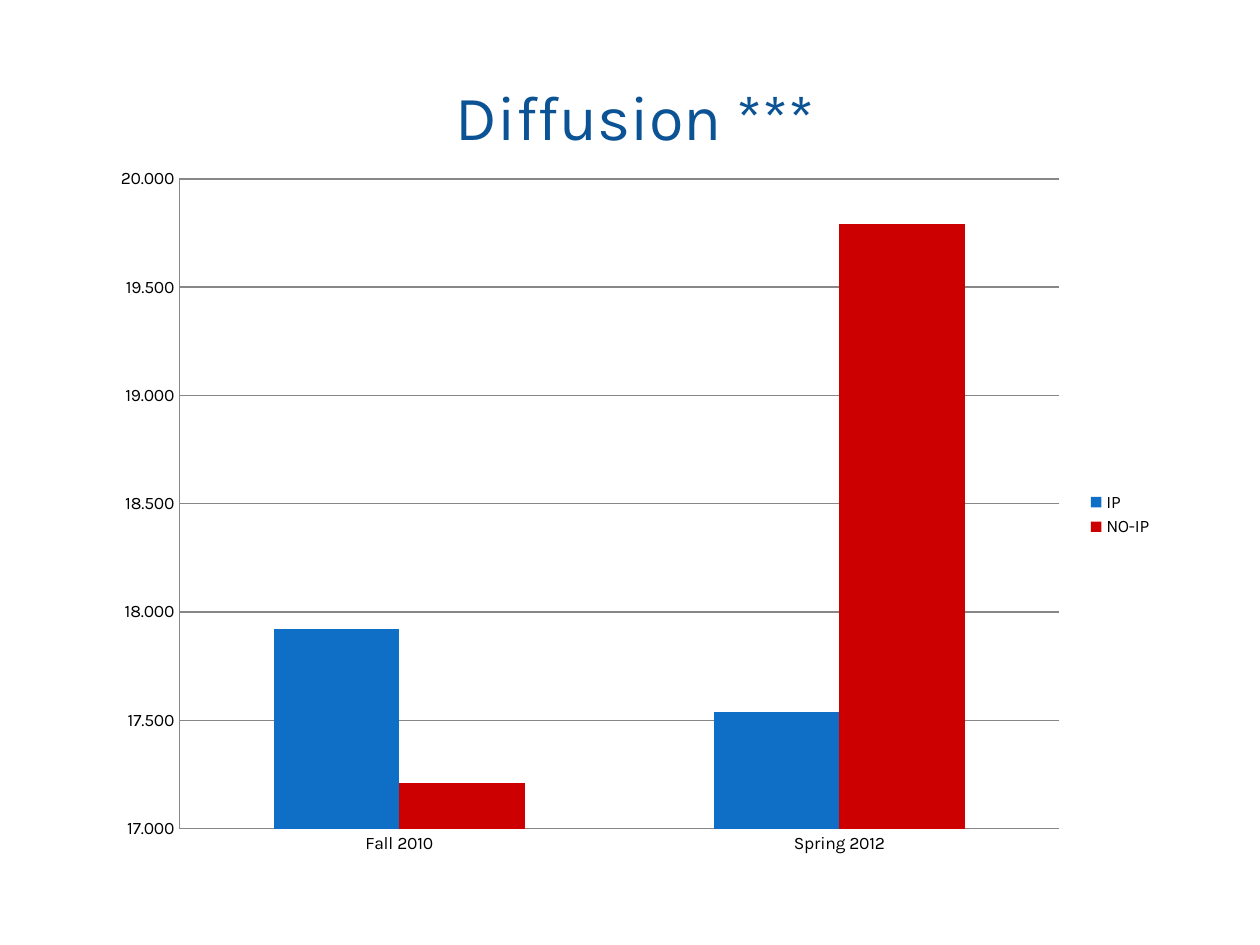
from lxml import etree
from pptx import Presentation
from pptx.chart.data import CategoryChartData
from pptx.dml.color import RGBColor
from pptx.enum import chart as ch, text
from pptx.oxml import parse_xml
from pptx.oxml.ns import nsdecls
from pptx.util import Pt

COLORS = {"title": "0B5394", "text": "000000", "line": "878787",
          "IP": "0F6FC6", "NO-IP": "CC0000"}
FONT = "Karla"
LEFT, WIDTH = Pt(60), Pt(606)
CATEGORIES = ["Fall 2010", "Spring 2012"]
SERIES = {"IP": [17.92, 17.54], "NO-IP": [17.21, 19.79]}
PLOT_AREA = {"x": 0.07, "y": 0.03, "w": 0.83, "h": 0.91}


def rgb(name):
    return RGBColor.from_string(COLORS[name])


def style_font(font, size, color):
    font.name = FONT
    font.size = Pt(size)
    font.color.rgb = rgb(color)


def style_line(line):
    line.color.rgb = rgb("line")
    line.width = Pt(0.75)


def add_title(s, title):
    sp = s.shapes.title
    sp.left, sp.top, sp.width, sp.height = LEFT, Pt(48), WIDTH, Pt(36)
    tf = sp.text_frame
    tf.text = title
    tf.word_wrap = True
    tf.auto_size = text.MSO_AUTO_SIZE.NONE
    tf.vertical_anchor = text.MSO_ANCHOR.MIDDLE
    p = tf.paragraphs[0]
    p.alignment = text.PP_ALIGN.CENTER
    style_font(p.runs[0].font, 36, "title")


def set_plot_layout(chart):
    plot_area = chart._chartSpace.chart.plotArea
    for old in plot_area.findall("{*}layout"):
        plot_area.remove(old)
    layout = parse_xml(
        f'<c:layout {nsdecls("c")}><c:manualLayout><c:layoutTarget val="inner"/>'
        '<c:xMode val="edge"/><c:yMode val="edge"/></c:manualLayout></c:layout>')
    for key, value in PLOT_AREA.items():
        tag = layout[0][0].tag.replace("layoutTarget", key)
        etree.SubElement(layout[0], tag).set("val", str(value))
    plot_area.insert(0, layout)


def add_column_chart(s):
    data = CategoryChartData(number_format="####.000")
    data.categories = CATEGORIES
    for name, values in SERIES.items():
        data.add_series(name, values)
    chart = s.shapes.add_chart(ch.XL_CHART_TYPE.COLUMN_CLUSTERED, LEFT, Pt(90),
                               WIDTH, Pt(408), data).chart
    chart.has_title = False
    style_font(chart.font, 10, "text")

    # Columns
    plot = chart.plots[0]
    plot.gap_width = 150
    plot.overlap = 0
    plot.vary_by_categories = False
    for series in plot.series:
        series.format.fill.solid()
        series.format.fill.fore_color.rgb = rgb(series.name)

    # Axes
    for axis in (chart.category_axis, chart.value_axis):
        axis.major_tick_mark = axis.minor_tick_mark = ch.XL_TICK_MARK.NONE
        style_line(axis.format.line)
    axis = chart.value_axis
    axis.minimum_scale, axis.maximum_scale, axis.major_unit = 17, 20, 0.5
    axis.has_major_gridlines = True
    style_line(axis.major_gridlines.format.line)
    axis.tick_labels.number_format = "####.000"
    axis.tick_labels.number_format_is_linked = False

    # Legend
    chart.has_legend = True
    chart.legend.position = ch.XL_LEGEND_POSITION.RIGHT
    chart.legend.include_in_layout = False
    set_plot_layout(chart)


def main():
    prs = Presentation()
    prs.slide_width, prs.slide_height = Pt(720), Pt(540)
    s = prs.slides.add_slide(prs.slide_layouts[5])
    add_title(s, "Diffusion ***")
    add_column_chart(s)
    prs.save("out.pptx")


if __name__ == "__main__":
    main()
